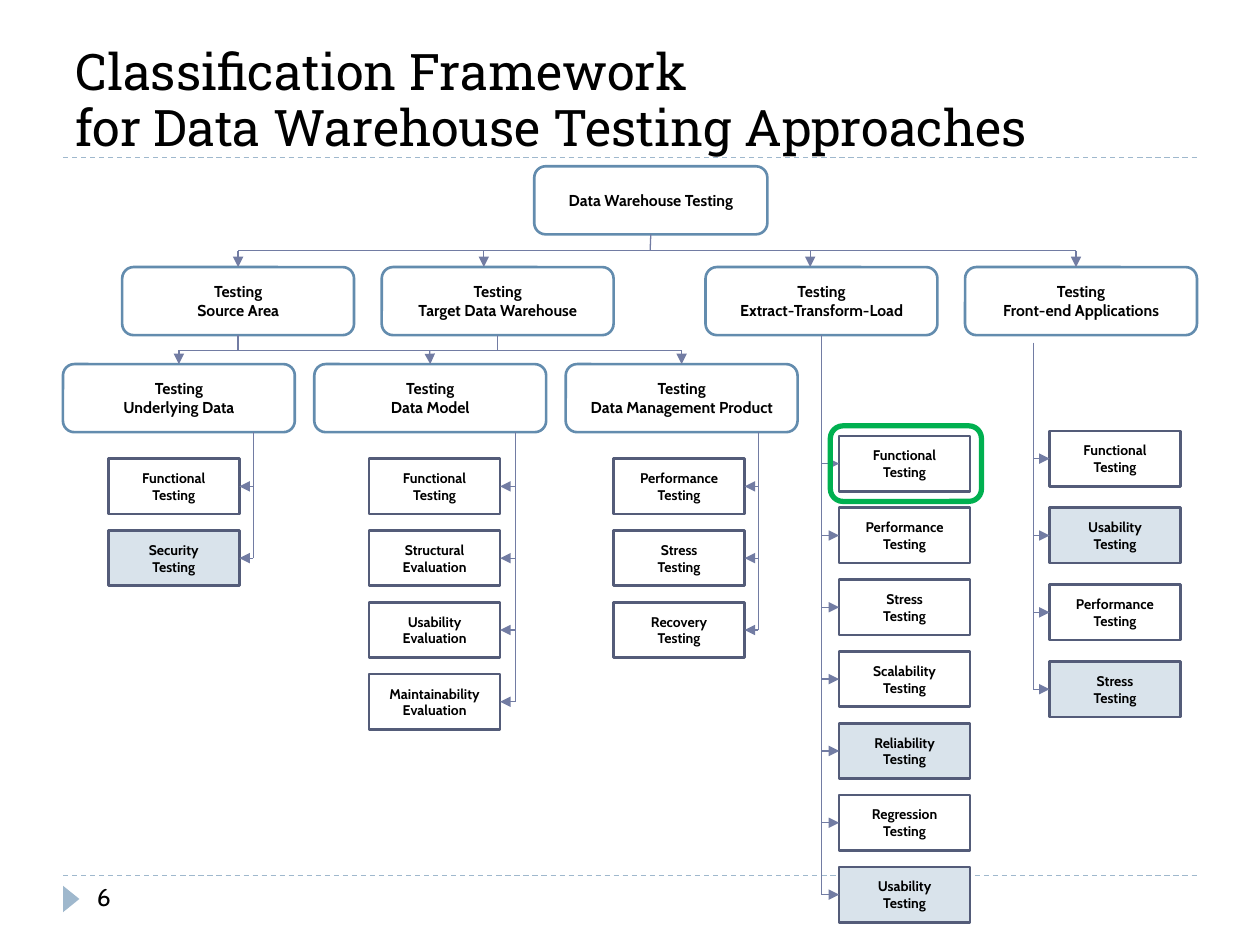
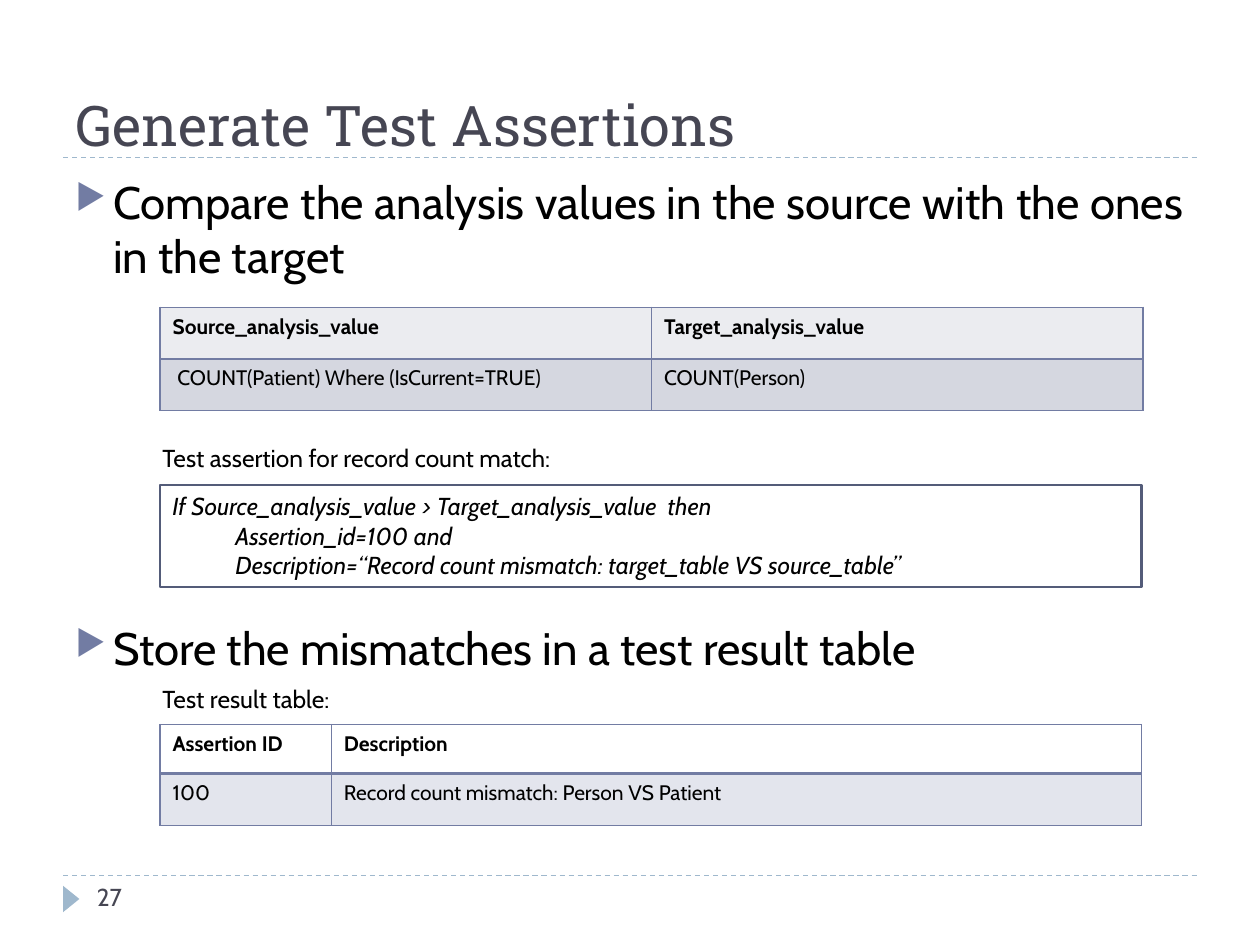
from lxml.etree import SubElement
from pptx import Presentation
from pptx.dml.color import RGBColor
from pptx.enum.dml import MSO_LINE
from pptx.enum.shapes import MSO_CONNECTOR, MSO_SHAPE
from pptx.enum.text import MSO_ANCHOR as ANCHOR, PP_ALIGN as ALIGN
from pptx.oxml import parse_xml
from pptx.oxml.ns import nsdecls, qn
from pptx.util import Inches, Pt

HEADING_FONT, BODY_FONT = "Roboto Slab", "Cabin"
BLACK, SLATE = "000000", "464653"
PALE_BLUE, STEEL, INDIGO, NAVY = "9FB8CD", "638CAE", "727CA3", "545C79"
SHADED, GREEN = "D9E3EB", "00B050"
TOP, LEFT, BOTTOM, RIGHT = range(4)


def color(hex_value):
    return RGBColor.from_string(hex_value)


def write(frame, text, size=14, font=BODY_FONT, ink=BLACK, bold=False, italic=False,
          align=ALIGN.LEFT, anchor=ANCHOR.TOP, spacing=None, indents=()):
    """Fill a text frame; each line of text becomes a paragraph."""
    frame.word_wrap = True
    frame.vertical_anchor = anchor
    for i, line in enumerate(text.split("\n")):
        para = frame.paragraphs[0] if i == 0 else frame.add_paragraph()
        para.text = line
        para.alignment = align
        if spacing:
            para.line_spacing = spacing
        if i < len(indents) and indents[i]:
            para._p.get_or_add_pPr().set("marL", str(Inches(indents[i])))
        for run in para.runs:
            run.font.name, run.font.size = font, Pt(size)
            run.font.bold, run.font.italic = bold, italic
            run.font.color.rgb = color(ink)


def border(cell, widths):
    """Draw cell borders; widths are points for left, right, top, bottom."""
    props = cell._tc.get_or_add_tcPr()
    for i, (side, width) in enumerate(zip("LRTB", widths)):
        props.insert(i, parse_xml(
            f'<a:ln{side} {nsdecls("a")} w="{Pt(width)}"><a:solidFill>'
            f'<a:srgbClr val="{INDIGO}"/></a:solidFill></a:ln{side}>'))


class Deck:
    def __init__(self):
        self.prs = Presentation()
        self.prs.slide_width, self.prs.slide_height = Inches(10), Inches(7.5)
        self.slide = None

    def new_slide(self, title, number, title_size, ink, spacing=None):
        self.slide = self.prs.slides.add_slide(self.prs.slide_layouts[6])
        for y in (6.95, 1.25):
            self.line((0.5, y), (9.5, y), ink=PALE_BLUE, dashed=True)
        marker = self.box(MSO_SHAPE.ISOSCELES_TRIANGLE, 0.46, 7.07, 0.21, 0.13, fill=PALE_BLUE)
        marker.rotation = 90
        heading = self.text(title, 0.5, 0.17, 9, 1.08, size=title_size, font=HEADING_FONT,
                            ink=ink, anchor=ANCHOR.BOTTOM, spacing=spacing)
        heading.text_frame.margin_bottom = 0
        self.text(number, 0.67, 6.95, 2.17, 0.4, ink=ink)

    def text(self, text, x, y, w, h, **style):
        holder = self.slide.shapes.add_textbox(Inches(x), Inches(y), Inches(w), Inches(h))
        write(holder.text_frame, text, **style)
        return holder

    def bullet(self, text, y, h):
        item = self.text(text, 0.5, y, 9, h, size=26, align=ALIGN.JUSTIFY, indents=[0.3])
        props = item.text_frame.paragraphs[0]._p.get_or_add_pPr()
        props.set("indent", str(-Inches(0.3)))
        SubElement(SubElement(props, qn("a:buClr")), qn("a:srgbClr"), val=INDIGO)
        SubElement(props, qn("a:buSzPct"), val="76000")
        SubElement(props, qn("a:buChar"), char="▶")

    def box(self, kind, x, y, w, h, fill=None, outline=None, weight=1.5, text=None, **style):
        shape = self.slide.shapes.add_shape(kind, Inches(x), Inches(y), Inches(w), Inches(h))
        shape.shadow.inherit = False
        if fill:
            shape.fill.solid()
            shape.fill.fore_color.rgb = color(fill)
        else:
            shape.fill.background()
        if outline:
            shape.line.color.rgb = color(outline)
            shape.line.width = Pt(weight)
        else:
            shape.line.fill.background()
        if text:
            write(shape.text_frame, text, **style)
        return shape

    def area(self, text, x, y, w=1.84):
        return self.box(MSO_SHAPE.ROUNDED_RECTANGLE, x, y, w, 0.54, outline=STEEL, text=text,
                        size=9, bold=True, align=ALIGN.CENTER, anchor=ANCHOR.MIDDLE)

    def leaf(self, text, x, y, fill):
        return self.box(MSO_SHAPE.RECTANGLE, x, y, 1.04, 0.44, fill=fill, outline=NAVY, text=text,
                        size=8, bold=True, align=ALIGN.CENTER, anchor=ANCHOR.MIDDLE)

    def line(self, start, end, ink=INDIGO, dashed=False, arrow=False, source=None, target=None):
        """Draw a line; source and target are (shape, side) joints."""
        link = self.slide.shapes.add_connector(
            MSO_CONNECTOR.STRAIGHT, *(Inches(v) for v in (*start, *end)))
        link.line.color.rgb = color(ink)
        link.line.width = Pt(0.75)
        if dashed:
            link.line.dash_style = MSO_LINE.DASH
        if arrow:
            SubElement(link.line._get_or_add_ln(), qn("a:tailEnd"), type="triangle")
        SubElement(link._element.spPr, qn("a:effectLst"))
        if source:
            link.begin_connect(*source)
        if target:
            link.end_connect(*target)

    def table(self, rows, y, col_widths, row_heights, fills, borders):
        grid = self.slide.shapes.add_table(
            len(rows), len(col_widths), Inches(1.27), Inches(y),
            Inches(sum(col_widths)), Inches(sum(row_heights))).table
        grid.first_row = grid.horz_banding = False
        for column, width in zip(grid.columns, col_widths):
            column.width = Inches(width)
        for r, values in enumerate(rows):
            grid.rows[r].height = Inches(row_heights[r])
            for c, value in enumerate(values):
                cell = grid.cell(r, c)
                write(cell.text_frame, value, size=12, bold=r == 0)
                if fills[r]:
                    cell.fill.solid()
                    cell.fill.fore_color.rgb = color(fills[r])
                else:
                    cell.fill.background()
                border(cell, borders[r])


def framework_slide(deck):
    deck.new_slide("Classification Framework \vfor Data Warehouse Testing Approaches", "6",
                   28.8, BLACK, spacing=0.92)

    # Root, areas and warehouse parts
    root = deck.area("Data Warehouse Testing", 4.24, 1.32, 1.85)
    source, warehouse, etl, front_end = [
        deck.area(f"Testing\n{name}", x, 2.12)
        for name, x in (("Source Area", 0.97), ("Target Data Warehouse", 3.03),
                        ("Extract-Transform-Load", 5.6), ("Front-end Applications", 7.66))]
    parts = [deck.area(f"Testing\n{name}", 0.5 + 1.995 * i, 2.89)
             for i, name in enumerate(("Underlying Data", "Data Model",
                                       "Data Management Product"))]

    # Branches from the root to the areas
    deck.line((1.89, 1.99), (8.54, 1.99))
    deck.line((5.16, 1.86), (5.16, 1.99), source=(root, BOTTOM))
    deck.line((1.89, 1.99), (1.89, 2.12), arrow=True, target=(source, TOP))
    for x in (3.84, 6.43, 8.54):
        deck.line((x, 1.99), (x, 2.12), arrow=True)

    # Branches from source and warehouse to their parts
    deck.line((1.42, 2.78), (5.41, 2.78))
    for area, x in ((source, 1.89), (warehouse, 3.95)):
        deck.line((x, 2.66), (x, 2.78), source=(area, BOTTOM))
    for part, x in zip(parts, (1.42, 3.41, 5.41)):
        deck.line((x, 2.78), (x, 2.89), arrow=True, target=(part, TOP))

    # Approaches: left, first top, pitch, spine x, spine top, spine parent, names (* is shaded)
    columns = [
        (0.86, 3.64, 0.57, 2.01, 3.43, None, ["Functional Testing", "*Security Testing"]),
        (2.93, 3.64, 0.57, 4.09, 3.43, None,
         ["Functional Testing", "Structural Evaluation", "Usability Evaluation",
          "Maintainability Evaluation"]),
        (4.87, 3.64, 0.57, 6.02, 3.43, None,
         ["Performance Testing", "Stress Testing", "Recovery Testing"]),
        (6.66, 3.46, 0.57, 6.52, 2.66, etl,
         ["Functional Testing", "Performance Testing", "Stress Testing", "Scalability Testing",
          "*Reliability Testing", "Regression Testing", "*Usability Testing"]),
        (8.33, 3.42, 0.61, 8.2, 2.72, None,
         ["Functional Testing", "*Usability Testing", "Performance Testing",
          "*Stress Testing"]),
    ]
    for left, top, pitch, spine, spine_top, parent, names in columns:
        side, edge = (LEFT, left) if spine < left else (RIGHT, left + 1.04)
        last_middle = top + pitch * (len(names) - 1) + 0.22
        deck.line((spine, spine_top), (spine, last_middle),
                  source=(parent, BOTTOM) if parent else None)
        for i, name in enumerate(names):
            y = top + pitch * i
            approach = deck.leaf(name.lstrip("*").replace(" ", "\n"), left, y,
                                 SHADED if name.startswith("*") else None)
            deck.line((spine, y + 0.22), (edge, y + 0.22), arrow=True, target=(approach, side))

    # Highlight on functional testing of the load process
    deck.box(MSO_SHAPE.ROUNDED_RECTANGLE, 6.59, 3.38, 1.2, 0.6, outline=GREEN, weight=3)


def assertions_slide(deck):
    deck.new_slide("Generate Test Assertions", "27", 32, SLATE)

    # Comparison of source and target
    deck.bullet("Compare the analysis values in the source with the ones in the target", 1.33, 1)
    deck.table([["Source_analysis_value", "Target_analysis_value"],
                [" COUNT(Patient) Where (IsCurrent=TRUE)", "COUNT(Person)"]],
               2.44, [3.9, 3.9], [0.41, 0.41], ["EBECF0", "D5D7E0"], [(1, 1, 1, 1)] * 2)
    deck.text("Test assertion for record count match:", 1.19, 3.47, 4.16, 0.34)
    deck.box(MSO_SHAPE.RECTANGLE, 1.27, 3.85, 7.79, 0.81, outline=NAVY, italic=True,
             indents=[0, 0.5, 0.5],
             text="If Source_analysis_value > Target_analysis_value  then\n"
                  "Assertion_id=100 and\n"
                  "Description=“Record count mismatch: target_table VS source_table”")

    # Stored mismatches
    deck.bullet("Store the mismatches in a test result table", 4.87, 0.54)
    deck.text("Test result table:", 1.19, 5.38, 4.16, 0.34)
    deck.table([["Assertion ID", "Description"],
                ["100", "Record count mismatch: Person VS Patient"]],
               5.75, [1.36, 6.43], [0.39, 0.41], [None, "E3E5ED"], [(1, 1, 1, 2), (1, 1, 2, 1)])


def main():
    deck = Deck()
    framework_slide(deck)
    assertions_slide(deck)
    deck.prs.save("out.pptx")


if __name__ == "__main__":
    main()
